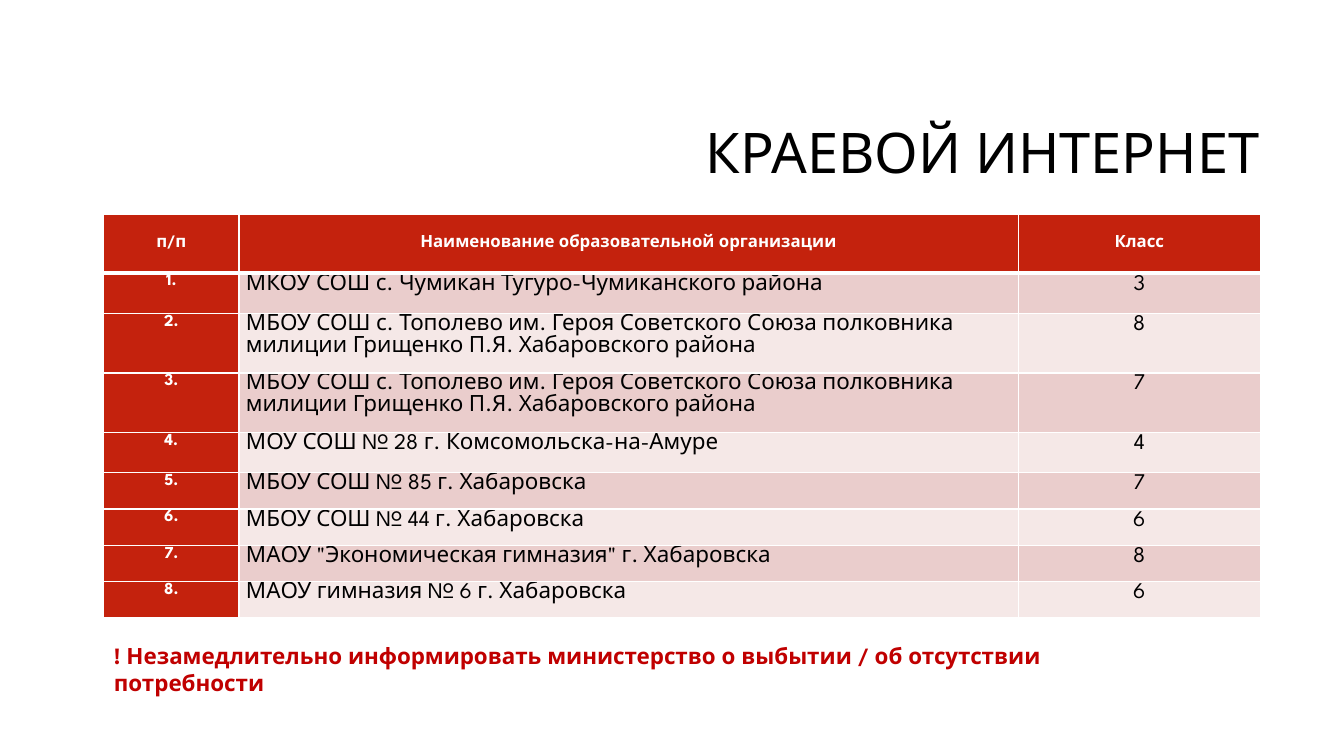
from dataclasses import dataclass

from lxml.etree import SubElement
from pptx import Presentation
from pptx.dml.color import RGBColor as Color
from pptx.enum.text import MSO_ANCHOR as Anchor, MSO_AUTO_SIZE as AutoSize, PP_ALIGN as Align
from pptx.oxml.ns import qn
from pptx.util import Inches, Pt


@dataclass(frozen=True)
class Theme:
    """Colours, font and type sizes of the slide."""
    font: str = "League Spartan"
    ink: str = "000000"
    paper: str = "FFFFFF"
    red: str = "C4220D"
    warning: str = "C00000"
    bands: tuple = ("EACDCC", "F5E8E7")
    title_size: int = 40
    body_size: int = 16
    label_size: int = 12


THEME = Theme()
HEADINGS = ("п/п", "Наименование образовательной организации", "Класс")
TOPOLEVO = ("МБОУ СОШ с. Тополево им. Героя Советского Союза полковника "
            "милиции Грищенко П.Я. Хабаровского района")
SCHOOLS = (
    ("МКОУ СОШ с. Чумикан Тугуро-Чумиканского района", 3),
    (TOPOLEVO, 8),
    (TOPOLEVO, 7),
    ("МОУ СОШ № 28 г. Комсомольска-на-Амуре", 4),
    ("МБОУ СОШ № 85 г. Хабаровска", 7),
    ("МБОУ СОШ № 44 г. Хабаровска", 6),
    ('МАОУ "Экономическая гимназия" г. Хабаровска', 8),
    ("МАОУ гимназия № 6 г. Хабаровска", 6),
)
COLUMN_WIDTHS = (1.34, 7.73, 2.4)
ROW_HEIGHTS = (0.58, 0.4, 0.59, 0.59, 0.4, 0.36, 0.36, 0.36, 0.36)
NOTE = "! Незамедлительно информировать министерство о выбытии / об отсутствии потребности"


def write(frame, text, size, color, bold=False, align=Align.LEFT, spacing=1.0):
    """Write one formatted paragraph into a text frame."""
    frame.text = text
    para = frame.paragraphs[0]
    para.alignment = align
    para.line_spacing = spacing
    para.font.name = THEME.font
    para.font.size = Pt(size)
    para.font.bold = bold
    para.font.color.rgb = Color.from_string(color)


def set_borders(cell, top, bottom):
    """Draw the cell's borders with the given top and bottom widths."""
    properties = cell._tc.get_or_add_tcPr()
    for side, width in (("L", 1), ("R", 1), ("T", top), ("B", bottom)):
        line = SubElement(properties, qn(f"a:ln{side}"), w=str(Pt(width)))
        fill = SubElement(line, qn("a:solidFill"))
        SubElement(fill, qn("a:srgbClr"), val=THEME.paper)


def style_cell(cell, fill, row):
    """Set the margins, borders and fill of a cell."""
    cell.margin_left = cell.margin_right = Inches(0.07)
    cell.margin_top = cell.margin_bottom = 0
    cell.vertical_anchor = Anchor.MIDDLE if row == 0 else Anchor.TOP
    set_borders(cell, top=3 if row == 1 else 1, bottom=3 if row == 0 else 1)
    cell.fill.solid()
    cell.fill.fore_color.rgb = Color.from_string(fill)


def add_title(page, text):
    """Place and format the title placeholder."""
    title = page.shapes.title
    title.left, title.top = Inches(3.17), Inches(0.84)
    title.width, title.height = Inches(9.42), Inches(1.41)
    title.text_frame.vertical_anchor = Anchor.MIDDLE
    write(title.text_frame, text, THEME.title_size, THEME.ink, align=Align.RIGHT, spacing=0.9)


def add_school_table(page):
    """Add the numbered table of schools and classes."""
    rows = [HEADINGS] + [(f"{number}.", name, str(grade))
                         for number, (name, grade) in enumerate(SCHOOLS, 1)]
    table = page.shapes.add_table(
        len(rows), len(HEADINGS), Inches(1.03), Inches(2.13),
        Inches(sum(COLUMN_WIDTHS)), Inches(sum(ROW_HEIGHTS))).table
    table.first_col = True
    for column, width in zip(table.columns, COLUMN_WIDTHS):
        column.width = Inches(width)
    for row, (texts, height) in enumerate(zip(rows, ROW_HEIGHTS)):
        table.rows[row].height = Inches(height)
        for column, text in enumerate(texts):
            cell = table.cell(row, column)
            label = row == 0 or column == 0
            style_cell(cell, THEME.red if label else THEME.bands[(row - 1) % 2], row)
            write(cell.text_frame, text,
                  THEME.label_size if label else THEME.body_size,
                  THEME.paper if label else THEME.ink, bold=label,
                  align=Align.LEFT if column == 1 and row else Align.CENTER,
                  spacing=1.07 if row else 0.8)


def add_note(page, text):
    """Add the warning under the table."""
    box = page.shapes.add_textbox(Inches(1.03), Inches(6.32), Inches(10.82), Inches(0.37))
    box.text_frame.word_wrap = True
    box.text_frame.auto_size = AutoSize.SHAPE_TO_FIT_TEXT
    write(box.text_frame, text, THEME.body_size, THEME.warning, bold=True)


def main():
    """Build the slide and save the deck."""
    deck = Presentation()
    deck.slide_width, deck.slide_height = Inches(13.33), Inches(7.5)
    page = deck.slides.add_slide(deck.slide_layouts.get_by_name("Title Only"))
    add_title(page, "КРАЕВОЙ ИНТЕРНЕТ")
    add_school_table(page)
    add_note(page, NOTE)
    deck.save("out.pptx")


if __name__ == "__main__":
    main()
